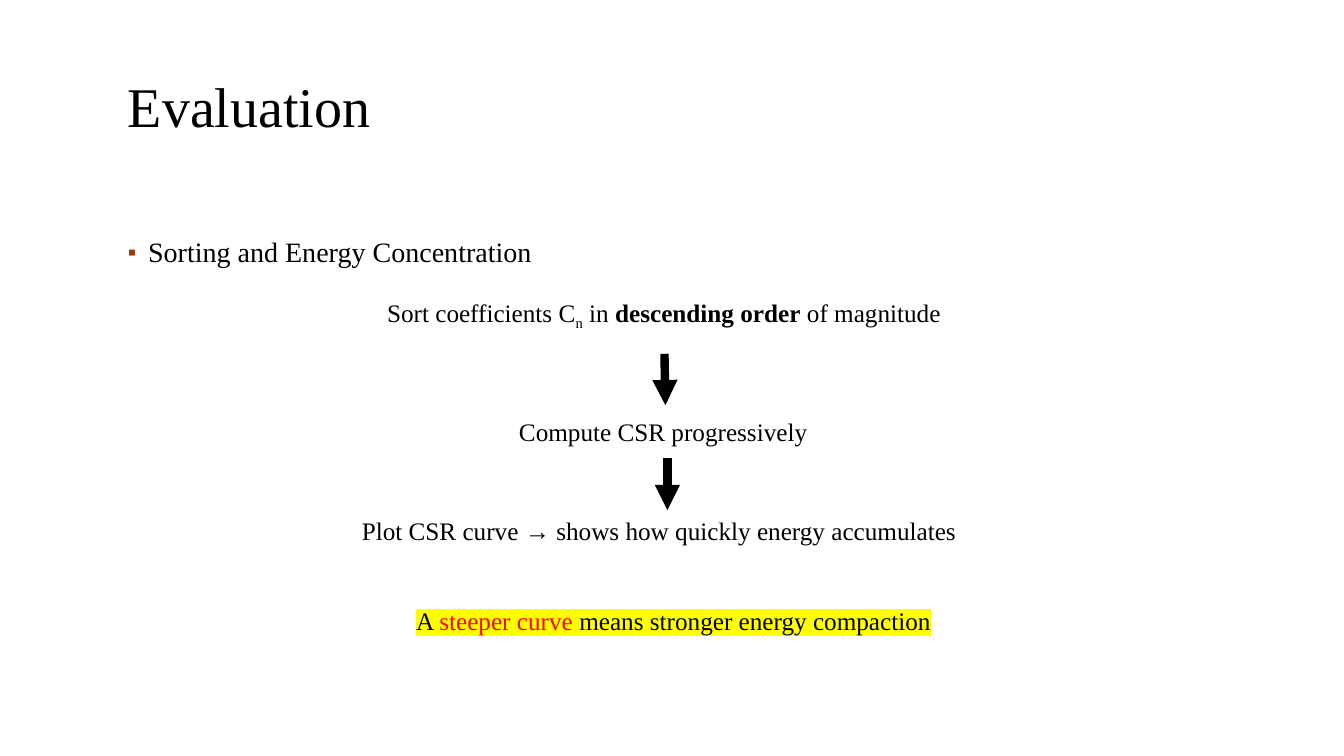
import pptx
import pptx.dml.color
import pptx.enum.shapes
import pptx.enum.text
import pptx.oxml
import pptx.oxml.ns
import pptx.util

NS = pptx.oxml.ns.nsdecls("a")
LINE = 5.33  # height of a one-line box, percent of the slide


def tint(code):
    return pptx.dml.color.RGBColor.from_string(code)


def node(xml):
    """Make an element from "tag attributes" or "tag attributes>children</a:tag"."""
    tag, sep, rest = xml.partition(">")
    return pptx.oxml.parse_xml(f"<{tag} {NS}>{rest}>" if sep else f"<{xml} {NS}/>")


class Deck:
    """Holds the style and the current slide; lengths are percent of its size."""

    font = "Times New Roman"
    ink = "000000"

    def __init__(self, width, height):
        self.prs = pptx.Presentation()
        self.prs.slide_width = pptx.util.Inches(width)
        self.prs.slide_height = pptx.util.Inches(height)
        self.slide = self.prs.slides.add_slide(self.prs.slide_layouts[6])

    def place(self, x, y):
        return (round(self.prs.slide_width * x / 100),
                round(self.prs.slide_height * y / 100))

    def run(self, para, text, size, color=None, bold=False, base=0, mark=None):
        run = para.add_run()
        run.text = text
        font = run.font
        font.size = pptx.util.Pt(size)
        font.bold = bold
        font.color.rgb = tint(color or self.ink)
        props = run._r.get_or_add_rPr()
        if base:
            props.set("baseline", str(base * 1000))
        if mark:
            props.append(node(f'a:highlight><a:srgbClr val="{mark}"/></a:highlight'))
        font.name = self.font

    def text(self, x, y, w, h, runs, size=18, grow=True):
        """Add a one-paragraph box; runs are (text, options) pairs."""
        box = self.slide.shapes.add_textbox(*self.place(x, y), *self.place(w, h))
        frame = box.text_frame
        frame.word_wrap = True
        if grow:
            frame.auto_size = pptx.enum.text.MSO_AUTO_SIZE.SHAPE_TO_FIT_TEXT
        para = frame.paragraphs[0]
        for words, opts in runs:
            self.run(para, words, size, **opts)
        return para

    def indent(self, para, left, first=0):
        props = para._p.get_or_add_pPr()
        props.set("marL", str(pptx.util.Inches(left)))
        props.set("indent", str(pptx.util.Inches(first)))
        return props

    def bullet(self, para, sign, color):
        props = self.indent(para, 0.2, -0.2)
        for xml in (f'a:buClr><a:srgbClr val="{color}"/></a:buClr',
                    'a:buSzPct val="85000"',
                    f'a:buFont typeface="{self.font}"',
                    f'a:buChar char="{sign}"'):
            props.append(node(xml))
        para.line_spacing = 0.9

    def arrow(self, start, end, width=6):
        kind = pptx.enum.shapes.MSO_CONNECTOR.STRAIGHT
        line = self.slide.shapes.add_connector(
            kind, *self.place(*start), *self.place(*end))
        line.line.width = pptx.util.Pt(width)
        line.line.color.rgb = tint(self.ink)
        line.line._get_or_add_ln().append(node('a:tailEnd type="triangle"'))
        line._element.spPr.append(node("a:effectLst"))


def main():
    deck = Deck(13.33, 7.5)
    deck.text(8.78, 8.8, 50, 10.27, [("Evaluation", {})], size=40)

    topic = deck.text(8.78, 30.93, 82.5, LINE,
                      [("Sorting and Energy Concentration", {})], size=20, grow=False)
    deck.bullet(topic, "▪", "9E3611")

    sort = [("Sort coefficients C", {}), ("n", {"base": -25}), (" in ", {}),
            ("descending order", {"bold": True}), (" of magnitude", {})]
    steps = [
        (28.06, 38.67, 42.83, sort),
        (37.88, 54.4, 23.18, [("Compute CSR progressively", {})]),
        (26.18, 67.47, 50,
         [("Plot CSR curve → shows how quickly energy accumulates", {})]),
    ]
    for x, y, w, runs in steps:
        deck.text(x, y, w, LINE, runs)

    deck.arrow((49.44, 46.8), (49.51, 53.6))
    deck.arrow((49.66, 60.53), (49.66, 67.47))

    mark = {"mark": "FFFF00"}
    claim = deck.text(26.48, 79.47, 50, LINE, [
        ("A ", mark),
        ("steeper curve ", {**mark, "color": "FF0000"}),
        ("means stronger energy compaction", mark)])
    claim.level = 1
    deck.indent(claim, 0.5)

    deck.prs.save("out.pptx")


if __name__ == "__main__":
    main()
